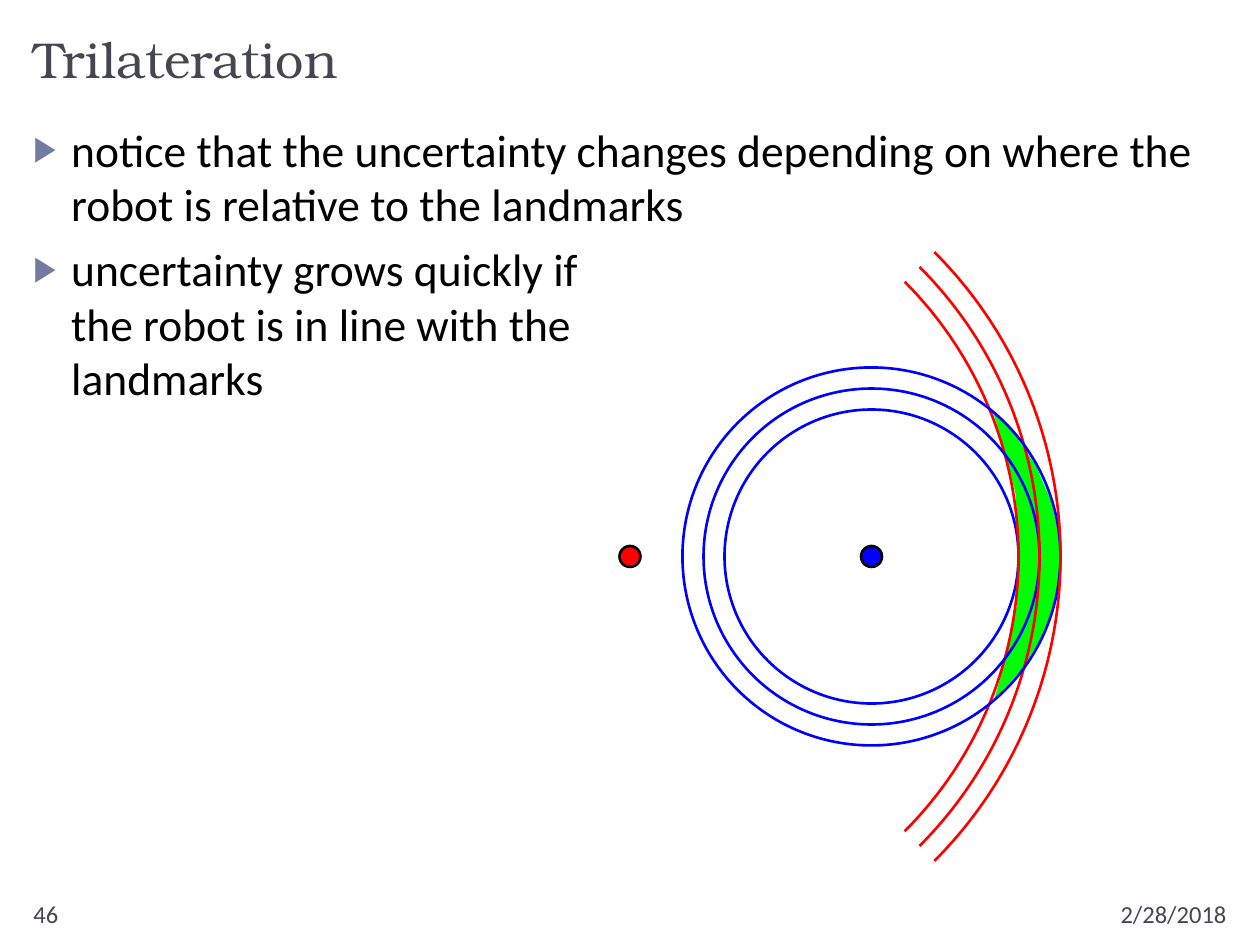
from math import cos, radians, sin, tan

from lxml.etree import SubElement
from pptx import Presentation
from pptx.dml.color import RGBColor
from pptx.enum.shapes import MSO_SHAPE
from pptx.enum.text import MSO_ANCHOR, MSO_AUTO_SIZE, PP_ALIGN
from pptx.oxml.ns import qn
from pptx.util import Pt

# Content
TITLE = "Trilateration"
BULLETS = [
    "notice that the uncertainty changes depending on where the "
    "robot is relative to the landmarks",
    "uncertainty grows quickly if\nthe robot is in line with the\nlandmarks",
]
DATE, PAGE = "2/28/2018", "46"

# Landmarks and their range circles, in points
RED_MARK, BLUE_MARK = (360, 318), (498, 318)
RED_RANGE, BLUE_RANGE = 234, 96
STEP = 12
MARK_SIZE = 6
SWEEP = 45
REGION = [
    (582.5, 317.5), (581, 346.3), (575.3, 374.4), (568, 400.3),
    (584.6, 381.6), (596.2, 362.9), (605.5, 334.8), (605.5, 306.7),
    (600.5, 285.8), (591.8, 265.7), (577.4, 244.8), (567.4, 235.4),
    (574.6, 258.5), (580.3, 282.2), (581.8, 304.6),
]

THEME = {
    "head": "TeX Gyre Bonum", "body": "Calibri",
    "title": 28.8, "text": 26, "small": 14, "line": 1.5,
    "ink": "464653", "black": "000000", "bullet": "727CA3",
    "red": "FF0000", "blue": "0000FF", "green": "00FF00",
}


def color(name):
    return RGBColor.from_string(THEME[name])


def style(par, font, size, ink, align=PP_ALIGN.LEFT):
    par.alignment = align
    for run in par.runs:
        run.font.name = THEME[font]
        run.font.size = Pt(THEME[size])
        run.font.color.rgb = color(ink)


def paint(shape, fill=None, line=None):
    shape.shadow.inherit = False
    if fill:
        shape.fill.solid()
        shape.fill.fore_color.rgb = color(fill)
    else:
        shape.fill.background()
    if line:
        shape.line.color.rgb = color(line)
        shape.line.width = Pt(THEME["line"])
    else:
        shape.line.fill.background()


def add_text(left, top, width, height):
    frame = slide.shapes.add_textbox(
        Pt(left), Pt(top), Pt(width), Pt(height)).text_frame
    frame.word_wrap = True
    return frame


def add_ring(mid, radius, fill, line):
    x, y = mid
    ring = slide.shapes.add_shape(
        MSO_SHAPE.OVAL, Pt(x - radius), Pt(y - radius),
        Pt(2 * radius), Pt(2 * radius))
    paint(ring, fill, line)


def add_path(points, close, fill, line):
    spots = [(Pt(x), Pt(y)) for x, y in points]
    pen = slide.shapes.build_freeform(*spots[0], scale=1)
    pen.add_line_segments(spots[1:], close=close)
    shape = pen.convert_to_shape()
    paint(shape, fill, line)
    return shape


def add_arc(mid, radius, line):
    """Two cubic curves that meet at the arc's rightmost point."""
    turn = radians(SWEEP)
    pull = 4 / 3 * tan(turn / 4) * radius
    end_x, end_y = radius * cos(turn), radius * sin(turn)
    half = [(end_x, -end_y),
            (end_x + pull * sin(turn), -end_y + pull * cos(turn)),
            (radius, -pull)]
    points = half + [(radius, 0)] + [(x, -y) for x, y in reversed(half)]
    shape = add_path([(mid[0] + x, mid[1] + y) for x, y in points],
                     False, None, line)
    # Turn each three straight segments into one curve
    legs = list(shape._element.iter(qn("a:lnTo")))
    route = legs[0].getparent()
    for i in range(0, len(legs), 3):
        curve = SubElement(route, qn("a:cubicBezTo"))
        for leg in legs[i:i + 3]:
            curve.append(leg[0])
            route.remove(leg)


def add_bullet(par):
    props = par._p.get_or_add_pPr()
    props.set("marL", str(Pt(21.6)))
    props.set("indent", str(-Pt(21.6)))
    tint = SubElement(props, qn("a:buClr"))
    SubElement(tint, qn("a:srgbClr"), val=THEME["bullet"])
    SubElement(props, qn("a:buSzPct"), val="76000")
    SubElement(props, qn("a:buFont"), typeface=THEME["body"])
    SubElement(props, qn("a:buChar"), char="▶")


deck = Presentation()
deck.slide_width, deck.slide_height = Pt(720), Pt(540)
slide = deck.slides.add_slide(deck.slide_layouts[5])

# Title
title = slide.shapes.title
title.left, title.top, title.width, title.height = (
    Pt(12), Pt(12), Pt(696), Pt(42))
title.text_frame.text = TITLE
title.text_frame.auto_size = MSO_AUTO_SIZE.NONE
title.text_frame.vertical_anchor = MSO_ANCHOR.BOTTOM
style(title.text_frame.paragraphs[0], "head", "title", "ink")

# Region of uncertainty, under the curves
add_path(REGION, True, "green", None)

# Bullets
body = add_text(12, 66, 696, 432)
for i, line in enumerate(BULLETS):
    par = body.add_paragraph() if i else body.paragraphs[0]
    par.text = line
    par.space_before = Pt(6)
    style(par, "body", "text", "black")
    add_bullet(par)

# Page number and date
for left, width, text, align in [
        (12, 156, PAGE, PP_ALIGN.LEFT), (576, 132, DATE, PP_ALIGN.RIGHT)]:
    foot = add_text(left, 510, width, 19.2)
    foot.text = text
    style(foot.paragraphs[0], "body", "small", "ink", align)

# Range curves: nominal distance, one step less and one step more
for gap in (-STEP, 0, STEP):
    add_ring(BLUE_MARK, BLUE_RANGE + gap, None, "blue")
    add_arc(RED_MARK, RED_RANGE + gap, "red")

# Landmarks
add_ring(RED_MARK, MARK_SIZE, "red", "black")
add_ring(BLUE_MARK, MARK_SIZE, "blue", "black")

deck.save("out.pptx")
